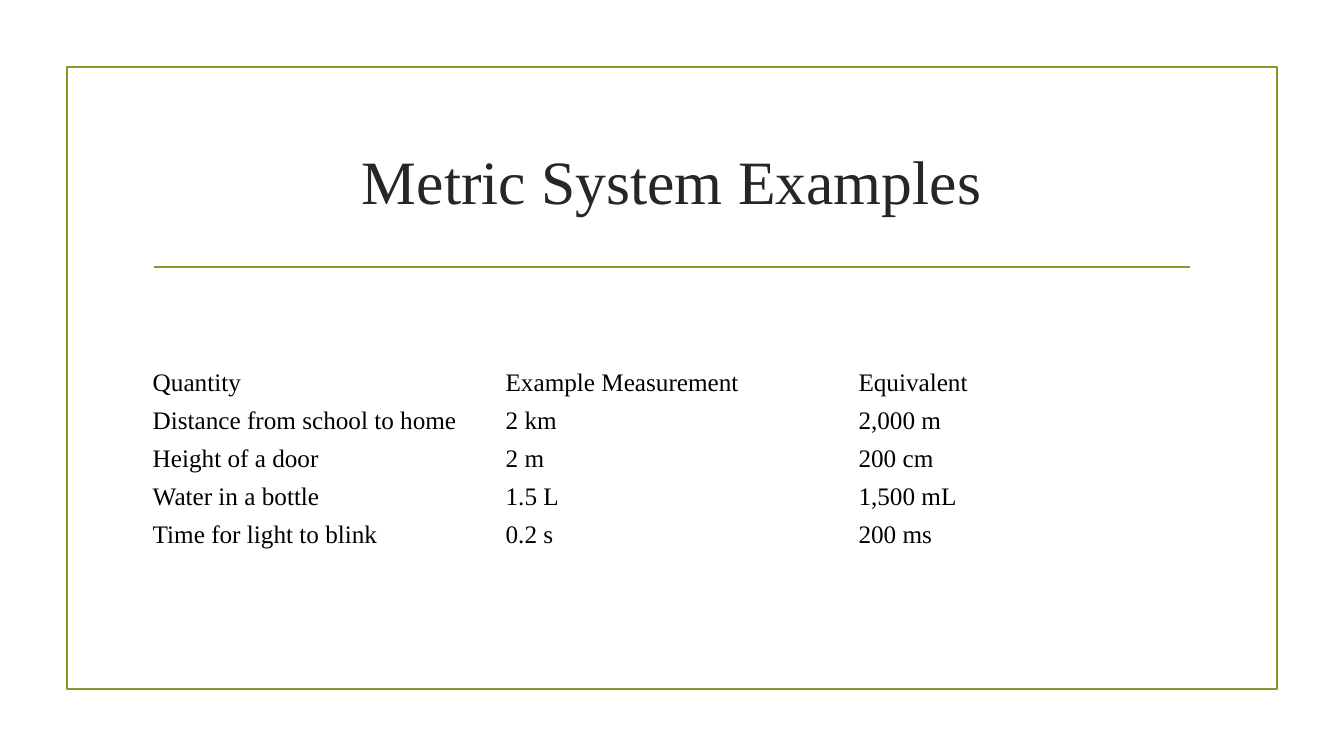
"""Build a slide with a framed table of metric system examples."""
from lxml import etree
from pptx import Presentation
from pptx import util as u
from pptx.dml.color import RGBColor
from pptx.enum import shapes, text
from pptx.oxml.ns import qn

TITLE = "Metric System Examples"
ROWS = [
    ("Quantity", "Example Measurement", "Equivalent"),
    ("Distance from school to home", "2 km", "2,000 m"),
    ("Height of a door", "2 m", "200 cm"),
    ("Water in a bottle", "1.5 L", "1,500 mL"),
    ("Time for light to blink", "0.2 s", "200 ms"),
]
COLORS = {"olive": "83992A", "title": "262626", "body": "000000"}
FONT = "Times New Roman"
WIDTH, HEIGHT = 13.33, 7.5
FRAME_WIDTH, FRAME_HEIGHT = 12, 6.17
CONTENT_WIDTH = 10.5
CONTENT_LEFT = (WIDTH - CONTENT_WIDTH) / 2
TITLE_TOP, TITLE_HEIGHT = 1.07, 1.43
RULE_TOP, RULE_INSET = 2.65, 0.11
TABLE_TOP = 3.61
ROW_POINTS = 27.14


def style_line(line):
    line.color.rgb = RGBColor.from_string(COLORS["olive"])
    line.width = u.Pt(1.25)


def write(para, words, size, color):
    span = para.add_run()
    span.text = words
    span.font.name = FONT
    span.font.size = u.Pt(size)
    span.font.bold = False
    span.font.color.rgb = RGBColor.from_string(COLORS[color])


def add_frame(page):
    frame = page.shapes.add_shape(
        shapes.MSO_SHAPE.RECTANGLE,
        u.Inches((WIDTH - FRAME_WIDTH) / 2), u.Inches((HEIGHT - FRAME_HEIGHT) / 2),
        u.Inches(FRAME_WIDTH), u.Inches(FRAME_HEIGHT))
    frame.shadow.inherit = False
    frame.fill.background()
    style_line(frame.line)
    rule = page.shapes.add_connector(
        shapes.MSO_CONNECTOR.STRAIGHT,
        u.Inches(CONTENT_LEFT + RULE_INSET), u.Inches(RULE_TOP),
        u.Inches(CONTENT_LEFT + CONTENT_WIDTH - RULE_INSET), u.Inches(RULE_TOP))
    style_line(rule.line)
    etree.SubElement(rule._element.spPr, qn("a:effectLst"))


def add_title(page):
    title = page.shapes.title
    title.left, title.top = u.Inches(CONTENT_LEFT), u.Inches(TITLE_TOP)
    title.width, title.height = u.Inches(CONTENT_WIDTH), u.Inches(TITLE_HEIGHT)
    title.text_frame.vertical_anchor = text.MSO_ANCHOR.MIDDLE
    para = title.text_frame.paragraphs[0]
    para.alignment = text.PP_ALIGN.CENTER
    write(para, TITLE, 44, "title")


def add_examples(page):
    row_height = u.Pt(ROW_POINTS)
    table = page.shapes.add_table(
        len(ROWS), len(ROWS[0]), u.Inches(CONTENT_LEFT), u.Inches(TABLE_TOP),
        u.Inches(CONTENT_WIDTH), row_height * len(ROWS)).table
    table.first_row = table.horz_banding = False
    for row, values in zip(table.rows, ROWS):
        row.height = row_height
        for cell, value in zip(row.cells, values):
            cell.fill.background()
            cell.vertical_anchor = text.MSO_ANCHOR.MIDDLE
            cell.margin_top = cell.margin_bottom = u.Inches(0.04)
            write(cell.text_frame.paragraphs[0], value, 18, "body")


def main():
    deck = Presentation()
    deck.slide_width, deck.slide_height = u.Inches(WIDTH), u.Inches(HEIGHT)
    page = deck.slides.add_slide(deck.slide_layouts.get_by_name("Title Only"))
    add_frame(page)
    add_title(page)
    add_examples(page)
    deck.save("out.pptx")


if __name__ == "__main__":
    main()
